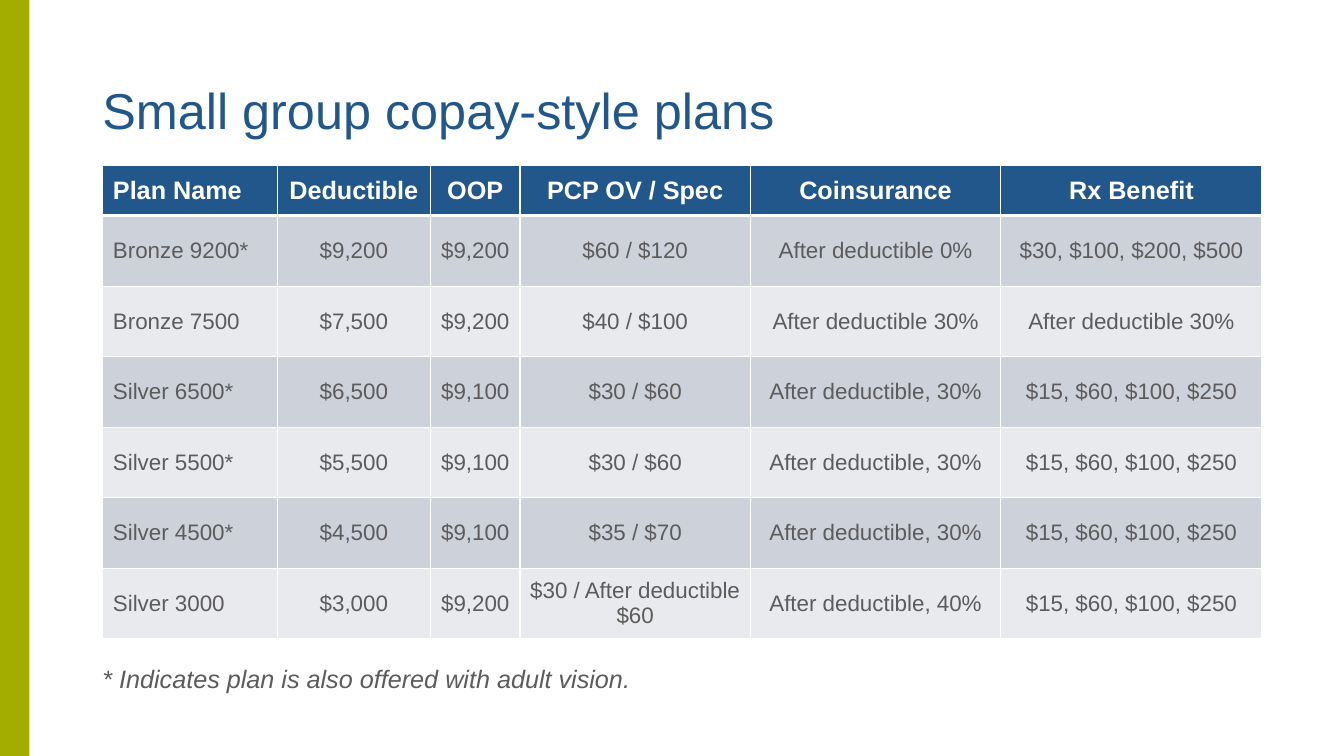
from lxml import etree
from pptx import Presentation
from pptx import util as u
from pptx.dml.color import RGBColor
from pptx.enum import shapes, text
from pptx.oxml import ns

COLORS = {
    "white": "FFFFFF",
    "green": "A2AD00",
    "blue": "21578A",
    "gray": "5D5B5B",
    "dark band": "CDD1DA",
    "light band": "E8EAED",
}
COLUMN_WIDTHS = [124.5, 109.5, 64, 164.5, 179, 186.5]
HEADER_HEIGHT, ROW_HEIGHT = 36, 50.4
PLANS = [
    ["Plan Name", "Deductible", "OOP", "PCP OV / Spec", "Coinsurance", "Rx Benefit"],
    ["Bronze 9200*", "$9,200", "$9,200", "$60 / $120", "After deductible 0%", "$30, $100, $200, $500"],
    ["Bronze 7500", "$7,500", "$9,200", "$40 / $100", "After deductible 30%", "After deductible 30%"],
    ["Silver 6500*", "$6,500", "$9,100", "$30 / $60", "After deductible, 30%", "$15, $60, $100, $250"],
    ["Silver 5500*", "$5,500", "$9,100", "$30 / $60", "After deductible, 30%", "$15, $60, $100, $250"],
    ["Silver 4500*", "$4,500", "$9,100", "$35 / $70", "After deductible, 30%", "$15, $60, $100, $250"],
    ["Silver 3000", "$3,000", "$9,200", "$30 / After deductible $60", "After deductible, 40%", "$15, $60, $100, $250"],
]


def paint(fill, color):
    fill.solid()
    fill.fore_color.rgb = RGBColor.from_string(COLORS[color])


def write(frame, words, size=18, color="gray", bold=False, italic=False,
          align=text.PP_ALIGN.LEFT, spacing=None):
    para = frame.paragraphs[0]
    para.alignment = align
    para.line_spacing = spacing
    span = para.add_run()
    span.text = words
    font = span.font
    font.name, font.size, font.bold, font.italic = "Arial", u.Pt(size), bold, italic
    font.color.rgb = RGBColor.from_string(COLORS[color])


def border(cell, **widths):
    """Draw white cell edges; widths are points keyed L, R, T and B, in that order."""
    properties = cell._tc.get_or_add_tcPr()
    for index, (side, width) in enumerate(widths.items()):
        line = etree.Element(ns.qn(f"a:ln{side}"), w=str(u.Pt(width)))
        fill = etree.SubElement(line, ns.qn("a:solidFill"))
        etree.SubElement(fill, ns.qn("a:srgbClr"), val=COLORS["white"])
        properties.insert(index, line)


class PlanSlide:
    def __init__(self, deck):
        self.page = deck.slides.add_slide(deck.slide_layouts[6])

    def bar(self, left, top, width, height, color):
        box = self.page.shapes.add_shape(
            shapes.MSO_SHAPE.RECTANGLE, *map(u.Pt, (left, top, width, height)))
        box.shadow.inherit = False
        paint(box.fill, color)
        box.line.fill.background()

    def label(self, left, top, width, height, words, anchor=text.MSO_ANCHOR.TOP, **style):
        box = self.page.shapes.add_textbox(*map(u.Pt, (left, top, width, height)))
        box.text_frame.word_wrap = True
        box.text_frame.vertical_anchor = anchor
        write(box.text_frame, words, **style)

    def table(self, left, top, widths, rows):
        height = HEADER_HEIGHT + ROW_HEIGHT * (len(rows) - 1)
        grid = self.page.shapes.add_table(
            len(rows), len(widths), *map(u.Pt, (left, top, sum(widths), height))).table
        for column, width in zip(grid.columns, widths):
            column.width = u.Pt(width)
        for r, values in enumerate(rows):
            header = r == 0
            grid.rows[r].height = u.Pt(HEADER_HEIGHT if header else ROW_HEIGHT)
            band = "blue" if header else ("light band", "dark band")[r % 2]
            for c, value in enumerate(values):
                cell = grid.cell(r, c)
                cell.vertical_anchor = text.MSO_ANCHOR.MIDDLE
                paint(cell.fill, band)
                border(cell, L=1, R=1, T=3 if r == 1 else 1, B=3 if header else 1)
                write(cell.text_frame, value, size=18 if header else 16, bold=header,
                      color="white" if header else "gray",
                      align=text.PP_ALIGN.CENTER if c else text.PP_ALIGN.LEFT)


def main():
    deck = Presentation()
    deck.slide_width, deck.slide_height = u.Pt(960), u.Pt(540)
    slide = PlanSlide(deck)
    slide.bar(0, 0, 21, 540, "green")
    slide.label(66, 29, 828, 104, "Small group copay-style plans", size=36, color="blue",
                anchor=text.MSO_ANCHOR.MIDDLE, spacing=0.9)
    slide.table(73.5, 118, COLUMN_WIDTHS, PLANS)
    slide.label(66, 470, 821, 51, "* Indicates plan is also offered with adult vision.",
                italic=True)
    deck.save("out.pptx")


if __name__ == "__main__":
    main()
